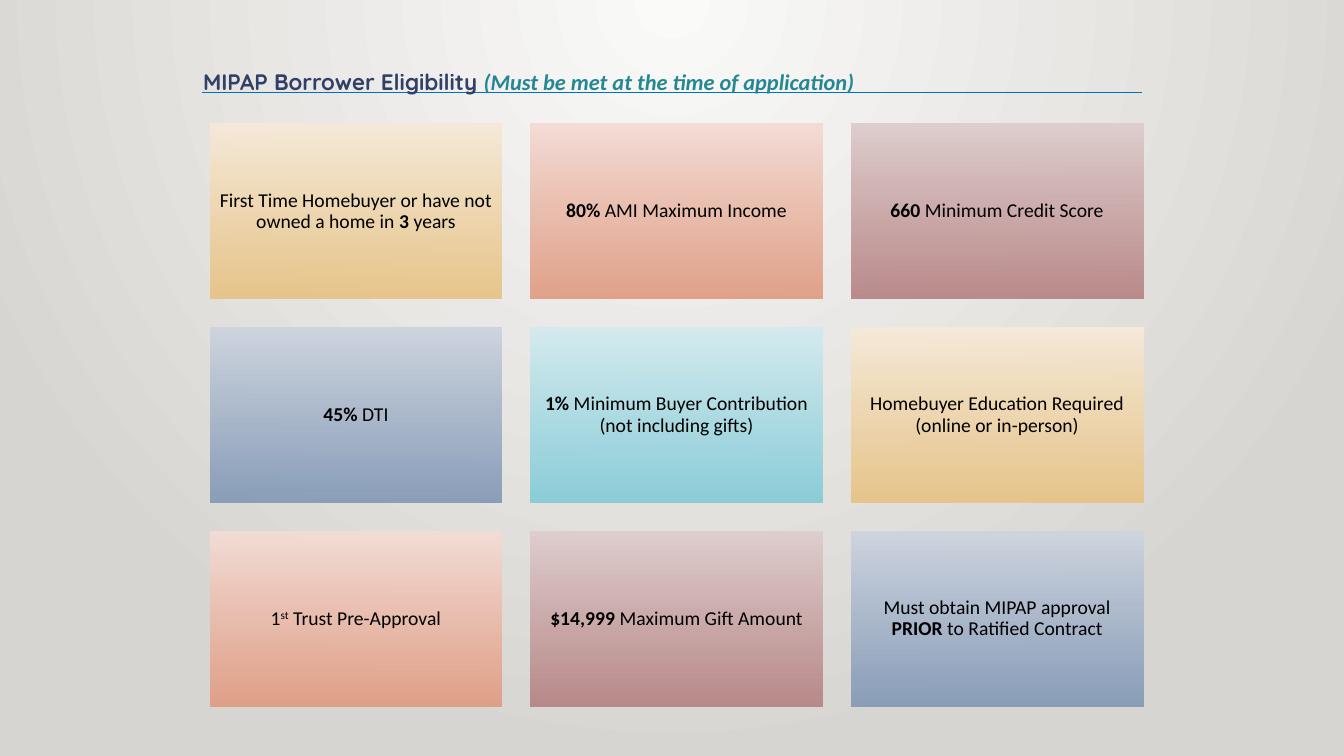
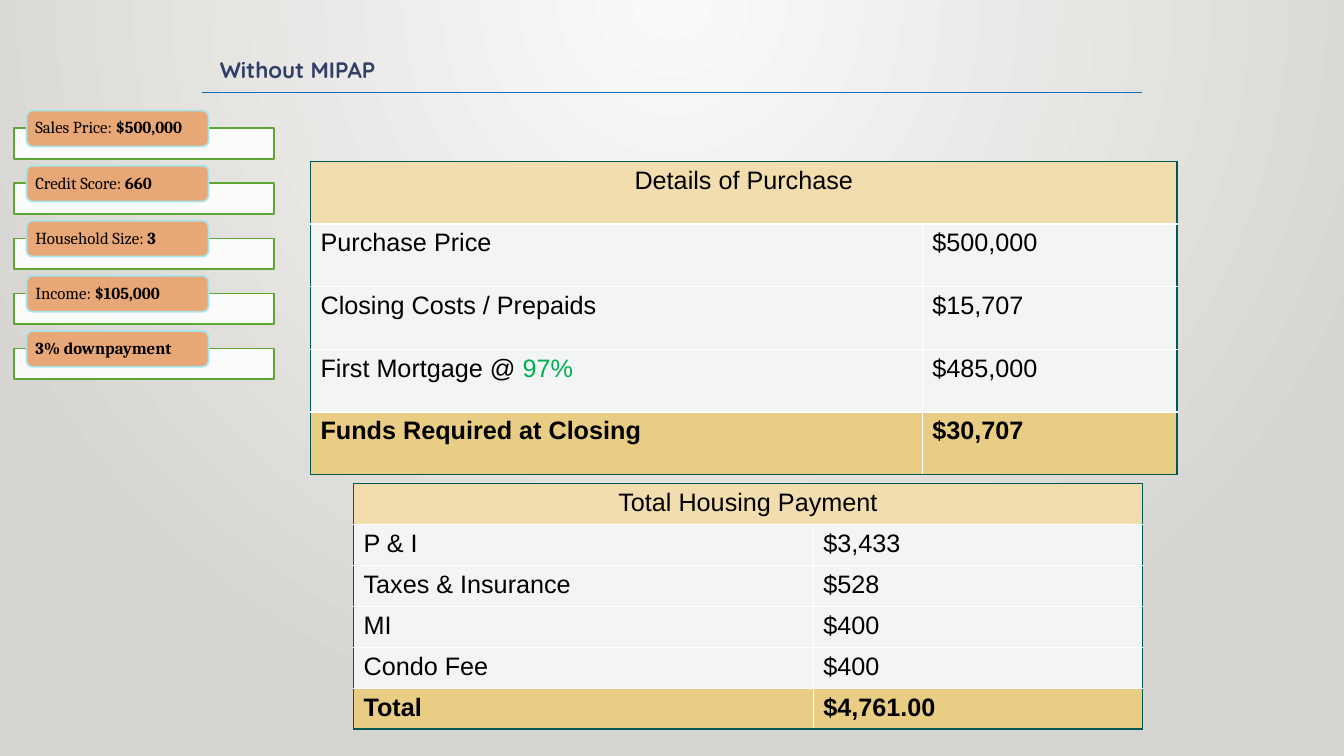
from lxml import etree
from pptx import Presentation
from pptx.dml.color import RGBColor
from pptx.enum.shapes import MSO_CONNECTOR, MSO_SHAPE
from pptx.enum.text import MSO_ANCHOR, PP_ALIGN
from pptx.oxml.ns import qn
from pptx.util import Pt

RECTANGLE, ROUNDED = MSO_SHAPE.RECTANGLE, MSO_SHAPE.ROUNDED_RECTANGLE
STRAIGHT = MSO_CONNECTOR.STRAIGHT
MIDDLE = MSO_ANCHOR.MIDDLE
LEFT, CENTER = PP_ALIGN.LEFT, PP_ALIGN.CENTER

BACKGROUND = ("FAFAF9", "D7D5D2")
BLACK, WHITE = "000000", "FFFFFF"
NAVY, TEAL, RULE_BLUE = "314066", "238894", "0070C0"
PILL_FILL, PILL_LINE, BAR_LINE = "E8A777", "A9E4EB", "5FA534"
HEADER_FILL, BODY_FILL, TOTAL_FILL = "F1DDAE", "F3F4F4", "EACD85"
TABLE_EDGE, GREEN = "005950", "00B050"
CARD_GRADIENTS = [
    ("F6EAD9", "E8C385"),
    ("F3DDD6", "E19C82"),
    ("DFCECE", "B78484"),
    ("CED5DF", "849AB7"),
    ("D5EBEF", "85CCD8"),
]

PLAIN = {}
BOLD = {"bold": True}
SUPERSCRIPT = {"baseline": "30000"}
TITLE = {"bold": True, "colour": NAVY}
TITLE_NOTE = {"bold": True, "italic": True, "colour": TEAL, "font": "Calibri"}

hex_colour = RGBColor.from_string


def add_runs(paragraph, font_name, size, runs):
    """Append (text, style) runs; a style overrides the black regular default."""
    for text, style in runs:
        run = paragraph.add_run()
        run.text = text
        font = run.font
        font.name = style.get("font", font_name)
        font.size = Pt(size)
        font.bold = style.get("bold", False)
        font.italic = style.get("italic", False)
        font.color.rgb = hex_colour(style.get("colour", BLACK))
        if "baseline" in style:
            font._element.set("baseline", style["baseline"])


def fill_gradient(fill, colours):
    fill.gradient()
    for stop, colour in zip(fill.gradient_stops, colours):
        stop.color.rgb = hex_colour(colour)


presentation = Presentation()
presentation.slide_width, presentation.slide_height = Pt(960), Pt(540)
blank_layout = presentation.slide_layouts[6]

# Shared background: a glow from the middle of the top edge
master = presentation.slide_master
fill_gradient(master.background.fill, BACKGROUND)
gradient = master.element.xpath(".//p:bgPr/a:gradFill")[0]
gradient.remove(gradient.find(qn("a:lin")))
glow = etree.SubElement(gradient, qn("a:path"), {"path": "circle"})
etree.SubElement(glow, qn("a:fillToRect"), l="43000", t="0", r="43000", b="100000")

# Titles, each above the same rule
titles = [
    (138, 45.4, [("MIPAP Borrower Eligibility ", TITLE),
                 ("(Must be met at the time of application)", TITLE_NOTE)]),
    (150, 36.7, [("Without MIPAP", TITLE)]),
]
for left, top, runs in titles:
    slide = presentation.slides.add_slide(blank_layout)
    rule = slide.shapes.add_connector(STRAIGHT, Pt(144), Pt(66.3), Pt(816), Pt(66.3))
    rule.line.color.rgb = hex_colour(RULE_BLUE)
    rule.line.width = Pt(1)
    etree.SubElement(rule._element.spPr, qn("a:effectLst"))
    title = slide.shapes.add_textbox(Pt(left), Pt(top), Pt(678), Pt(26.6))
    title.text_frame.word_wrap = True
    add_runs(title.text_frame.paragraphs[0], "Quicksand", 16, runs)

eligibility_slide, purchase_slide = presentation.slides

# Eligibility cards, three to a row
cards = [
    [("First Time Homebuyer or have not owned a home in ", PLAIN), ("3", BOLD),
     (" years", PLAIN)],
    [("80% ", BOLD), ("AMI Maximum Income", PLAIN)],
    [("660", BOLD), (" Minimum Credit Score", PLAIN)],
    [("45%", BOLD), (" DTI", PLAIN)],
    [("1%", BOLD), (" Minimum Buyer Contribution (not including gifts)", PLAIN)],
    [("Homebuyer Education Required (online or in-person)", PLAIN)],
    [("1", PLAIN), ("st", SUPERSCRIPT), (" Trust Pre-Approval", PLAIN)],
    [("$14,999 ", BOLD), ("Maximum Gift Amount", PLAIN)],
    [("Must obtain MIPAP approval ", PLAIN), ("PRIOR", BOLD),
     (" to Ratified Contract", PLAIN)],
]
for index, runs in enumerate(cards):
    row, column = divmod(index, 3)
    card = eligibility_slide.shapes.add_shape(
        RECTANGLE, Pt(150 + 229 * column), Pt(88.5 + 145.6 * row), Pt(208.5), Pt(125))
    card.shadow.inherit = False
    card.line.fill.background()
    fill_gradient(card.fill, CARD_GRADIENTS[index % len(CARD_GRADIENTS)])
    card.fill.gradient_angle = 270
    end_colour = card._element.xpath(".//a:gs[2]/a:srgbClr")[0]
    etree.SubElement(end_colour, qn("a:alpha"), val="92000")
    frame = card.text_frame
    frame.word_wrap = True
    frame.vertical_anchor = MIDDLE
    frame.margin_left = frame.margin_right = Pt(4.2)
    frame.margin_top = frame.margin_bottom = Pt(4.2)
    paragraph = frame.paragraphs[0]
    paragraph.alignment = CENTER
    paragraph.line_spacing = 0.9
    add_runs(paragraph, "Calibri", 14, runs)

# Buyer facts: a pill overlapping a white bar
buyer_facts = [
    [("Sales Price: ", PLAIN), ("$500,000", BOLD)],
    [("Credit Score: ", PLAIN), ("660", BOLD)],
    [("Household Size: ", PLAIN), ("3", BOLD)],
    [("Income: ", PLAIN), ("$105,000", BOLD)],
    [("3% downpayment", BOLD)],
]
for index, runs in enumerate(buyer_facts):
    offset = 39.35 * index
    bar = purchase_slide.shapes.add_shape(
        RECTANGLE, Pt(10), Pt(91.6 + offset), Pt(186), Pt(21.8))
    pill = purchase_slide.shapes.add_shape(
        ROUNDED, Pt(19), Pt(79 + offset), Pt(130), Pt(25.6))
    for shape, fill, line in ((bar, WHITE, BAR_LINE), (pill, PILL_FILL, PILL_LINE)):
        shape.shadow.inherit = False
        shape.fill.solid()
        shape.fill.fore_color.rgb = hex_colour(fill)
        shape.line.color.rgb = hex_colour(line)
        shape.line.width = Pt(1.25)
    bar_colour = bar._element.xpath("./p:spPr/a:solidFill/a:srgbClr")[0]
    etree.SubElement(bar_colour, qn("a:alpha"), val="90000")
    frame = pill.text_frame
    frame.word_wrap = True
    frame.vertical_anchor = MIDDLE
    frame.margin_left = frame.margin_right = Pt(5)
    frame.margin_top = frame.margin_bottom = 0
    paragraph = frame.paragraphs[0]
    paragraph.alignment = LEFT
    paragraph.line_spacing = 0.9
    add_runs(paragraph, "Cambria", 12, runs)

# Tables: left, top, column widths, row height, heading, rows
tables = [
    (221.8, 115.2, (437, 182), 44.8, "Details of Purchase", [
        ([("Purchase Price", PLAIN)], "$500,000"),
        ([("Closing Costs / Prepaids", PLAIN)], "$15,707"),
        ([("First Mortgage @ ", PLAIN), ("97%", {"colour": GREEN})], "$485,000"),
        ([("Funds Required at Closing", BOLD)], "$30,707"),
    ]),
    (252.5, 345.6, (328.5, 235), 29.2, "Total Housing Payment", [
        ([("P & I", PLAIN)], "$3,433"),
        ([("Taxes & Insurance", PLAIN)], "$528"),
        ([("MI", PLAIN)], "$400"),
        ([("Condo Fee", PLAIN)], "$400"),
        ([("Total", BOLD)], "$4,761.00"),
    ]),
]
for left, top, widths, row_height, heading, body in tables:
    last = len(body)
    table = purchase_slide.shapes.add_table(
        last + 1, 2, Pt(left), Pt(top), Pt(sum(widths)), Pt(row_height * (last + 1))).table
    table.first_row = table.horz_banding = False
    for column, width in zip(table.columns, widths):
        column.width = Pt(width)
    for row in table.rows:
        row.height = Pt(row_height)

    table.cell(0, 0).merge(table.cell(0, 1))
    heading_paragraph = table.cell(0, 0).text_frame.paragraphs[0]
    heading_paragraph.alignment = CENTER
    add_runs(heading_paragraph, "Arial", 18, [(heading, PLAIN)])
    for row_index, (label, amount) in enumerate(body, start=1):
        amount_style = BOLD if row_index == last else PLAIN
        for column_index, runs in enumerate((label, [(amount, amount_style)])):
            cell = table.cell(row_index, column_index)
            add_runs(cell.text_frame.paragraphs[0], "Arial", 18, runs)

    row_fills = [HEADER_FILL] + [BODY_FILL] * (last - 1) + [TOTAL_FILL]
    for row_index, row_fill in enumerate(row_fills):
        for column_index in range(2):
            cell = table.cell(row_index, column_index)
            cell.fill.solid()
            cell.fill.fore_color.rgb = hex_colour(row_fill)
            on_edge = {
                "a:lnL": column_index == 0,
                "a:lnR": column_index == 1 or row_index == 0,
                "a:lnT": row_index == 0,
                "a:lnB": row_index == last,
            }
            properties = cell._tc.get_or_add_tcPr()
            for position, (tag, is_edge) in enumerate(on_edge.items()):
                border = etree.Element(qn(tag), w=str(Pt(1)))
                solid = etree.SubElement(border, qn("a:solidFill"))
                etree.SubElement(solid, qn("a:srgbClr"), val=TABLE_EDGE if is_edge else WHITE)
                properties.insert(position, border)

presentation.save("out.pptx")
